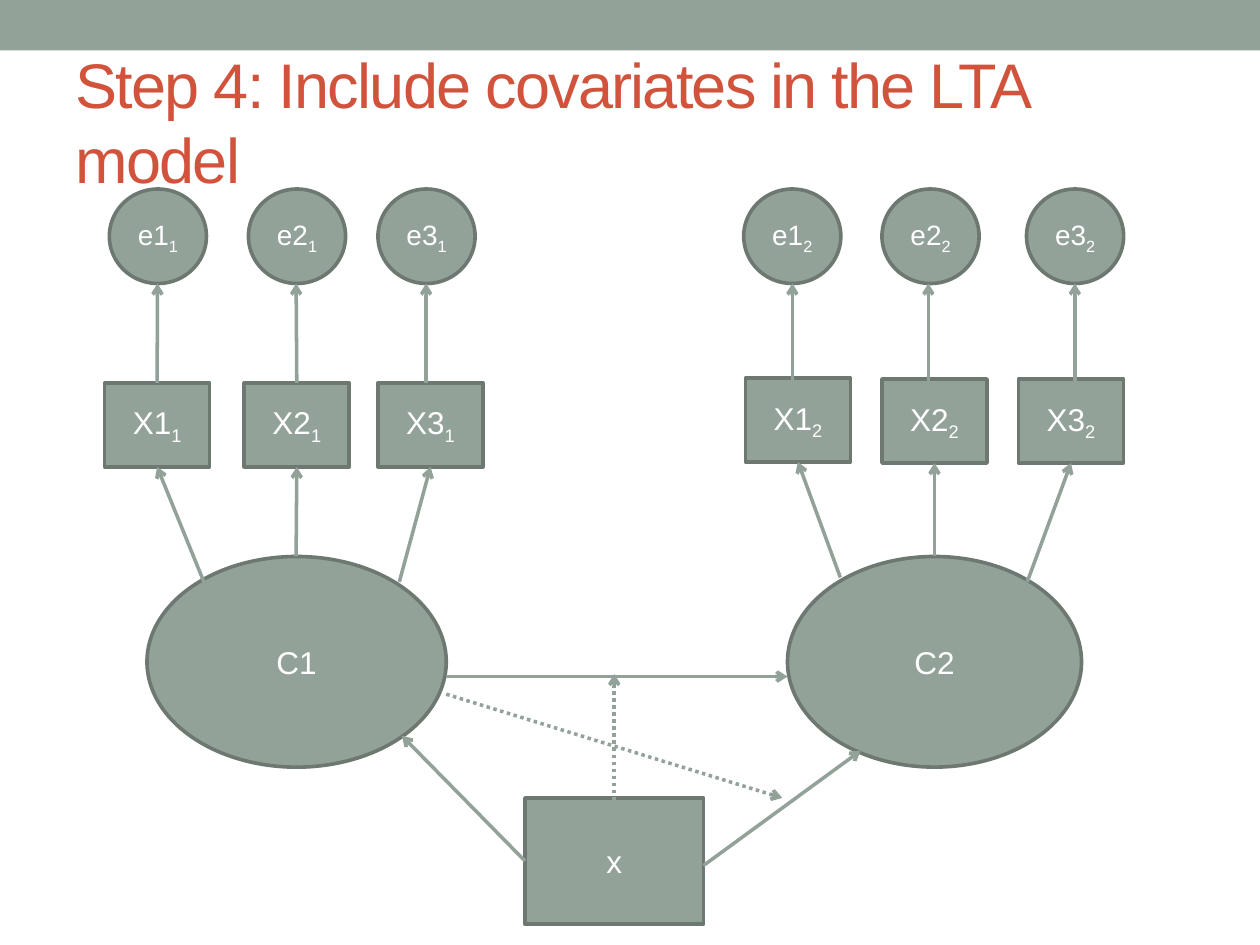
from lxml import etree
from pptx import Presentation
from pptx.dml.color import RGBColor
from pptx.enum import dml, shapes, text
from pptx.oxml import ns
from pptx.util import Pt

SAGE, DARK_SAGE, RUST, WHITE = "93A299", "6D7871", "D2533C", "FFFFFF"
rgb = RGBColor.from_string

prs = Presentation()
prs.slide_width, prs.slide_height = Pt(720), Pt(540)
slide = prs.slides.add_slide(prs.slide_layouts[5])


def add_node(kind, left, top, width, height, label, subscript="", size=18):
    node = slide.shapes.add_shape(kind, Pt(left), Pt(top), Pt(width), Pt(height))
    node.shadow.inherit = False
    node.fill.solid()
    node.fill.fore_color.rgb = rgb(SAGE)
    node.line.color.rgb = rgb(DARK_SAGE)
    node.line.width = Pt(2.08)
    node.text_frame.vertical_anchor = text.MSO_ANCHOR.MIDDLE
    paragraph = node.text_frame.paragraphs[0]
    paragraph.alignment = text.PP_ALIGN.CENTER
    paragraph.font.name = "Arial"
    paragraph.font.size = Pt(size)
    paragraph.font.color.rgb = rgb(WHITE)
    paragraph.add_run().text = label
    if subscript:
        index = paragraph.add_run()
        index.text = subscript
        index._r.get_or_add_rPr().set("baseline", "-25000")
    return node


def add_arrow(start, end, dotted=False):
    arrow = slide.shapes.add_connector(
        shapes.MSO_CONNECTOR.STRAIGHT, *[Pt(value) for value in (*start, *end)])
    arrow.line.color.rgb = rgb(SAGE)
    arrow.line.width = Pt(2)
    if dotted:
        arrow.line.dash_style = dml.MSO_LINE.ROUND_DOT
    etree.SubElement(arrow.line._get_or_add_ln(), ns.qn("a:tailEnd"), type="arrow")
    etree.SubElement(arrow._element.spPr, ns.qn("a:effectLst"))
    return arrow


OVAL, RECTANGLE = shapes.MSO_SHAPE.OVAL, shapes.MSO_SHAPE.RECTANGLE

band = slide.shapes.add_shape(RECTANGLE, 0, 0, prs.slide_width, Pt(28.8))
band.shadow.inherit = False
band.fill.solid()
band.fill.fore_color.rgb = rgb(SAGE)
band.line.fill.background()

title = slide.shapes.title
title.left, title.top, title.width, title.height = Pt(36), Pt(30.24), Pt(648), Pt(77.76)
title.text_frame.text = "Step 4: Include covariates in the LTA model"
title.text_frame.word_wrap = True
title.text_frame.auto_size = text.MSO_AUTO_SIZE.NONE
title.text_frame.vertical_anchor = text.MSO_ANCHOR.MIDDLE
heading = title.text_frame.paragraphs[0]
heading.alignment = text.PP_ALIGN.LEFT
heading.font.name = "Arial"
heading.font.size = Pt(36)
heading.font.color.rgb = rgb(RUST)
heading.runs[0]._r.get_or_add_rPr().set("spc", "-100")

# Latent class variables at the two time points
add_node(OVAL, 84, 318, 171, 120.4, "C1")
add_node(OVAL, 450, 318, 168, 120.4, "C2")

# Indicators: time, number, box left and top, error left, error arrow x, class arrow start
indicators = [
    ("1", 1, 59.8, 218.8, 62.5, 90, (116.5, 332.5)),
    ("1", 2, 139.6, 218.8, 142, 169.2, (169.2, 318)),
    ("1", 3, 216, 218.8, 216, 243.5, (228.2, 332.5)),
    ("2", 1, 426, 216, 425, 452.8, (480.2, 330)),
    ("2", 2, 504, 216.6, 504, 530.5, (534, 318)),
    ("2", 3, 582, 216.6, 586.6, 614.2, (587, 332.5)),
]
BOX_WIDTH, BOX_HEIGHT = 60, 48
ERROR_TOP, ERROR_WIDTH, ERROR_HEIGHT = 108, 55.5, 54
for time, number, box_left, box_top, error_left, error_x, class_start in indicators:
    box = add_node(RECTANGLE, box_left, box_top, BOX_WIDTH, BOX_HEIGHT,
                   f"X{number}", time)
    add_node(OVAL, error_left, ERROR_TOP, ERROR_WIDTH, ERROR_HEIGHT,
             f"e{number}", time, 16)
    box_middle = box_left + BOX_WIDTH / 2
    to_error = add_arrow((error_x, 218.8), (error_x, ERROR_TOP + ERROR_HEIGHT))
    if abs(error_x - box_middle) < 1:
        to_error.begin_connect(box, 0)
    to_box = add_arrow(class_start, (box_middle, box_top + BOX_HEIGHT))
    to_box.end_connect(box, 2)

# Transition from C1 to C2 and the covariate acting on it
add_arrow((255, 386.6), (450, 386.6))
covariate = add_node(RECTANGLE, 300, 456, 102, 72, "x")
add_arrow((402, 494.6), (491.8, 429))
to_c1 = add_arrow((300, 492), (229.7, 420.5))
to_c1.begin_connect(covariate, 1)
add_arrow((351, 469.4), (351, 385.2), dotted=True)
add_arrow((255, 396.7), (447, 456), dotted=True)

prs.save("out.pptx")
